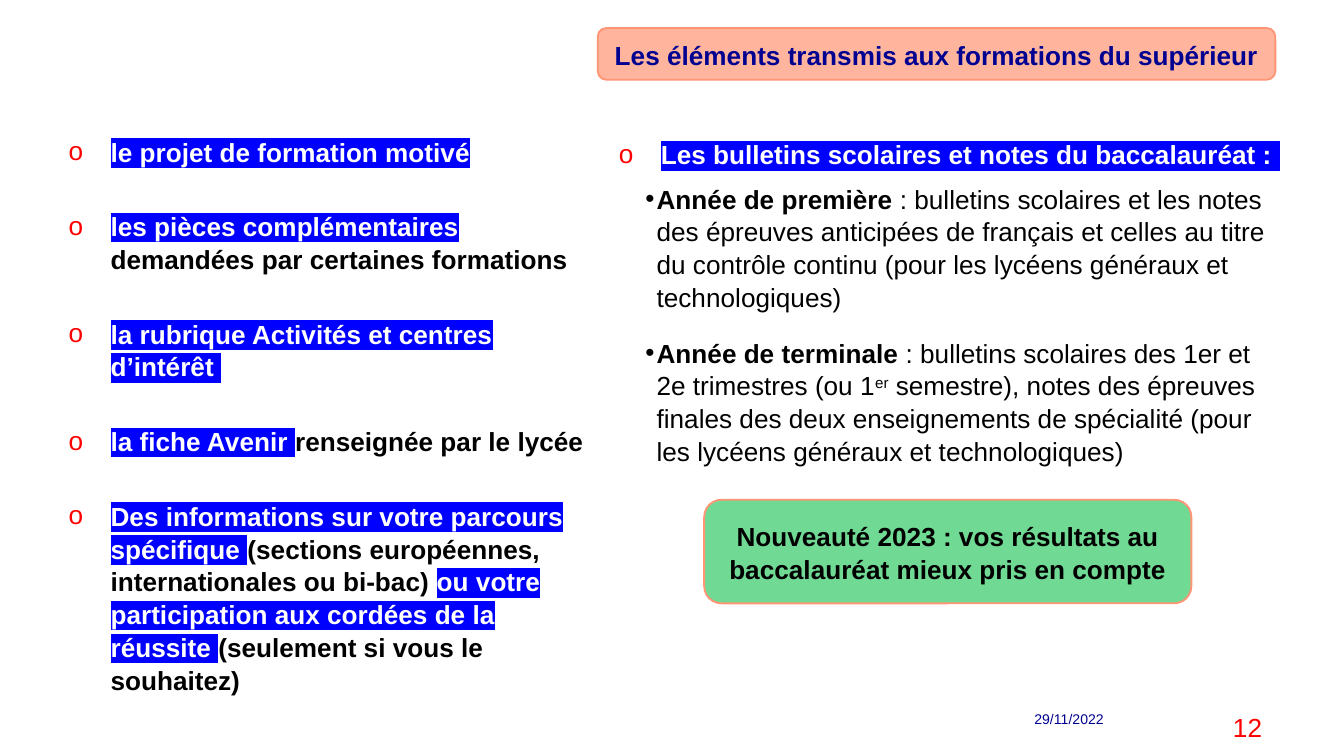
import pptx
import pptx.dml.color
import pptx.enum.shapes
import pptx.enum.text
import pptx.oxml.ns
import pptx.util
from dataclasses import dataclass
from lxml import etree

PX = 9525  # EMU in one px, 96 px to the inch
FONT = "Arial"
COLOURS = {
    "white": "FFFFFF",
    "black": "000000",
    "navy": "000091",
    "red": "FF0000",
    "blue": "0000FF",
    "salmon": "FF9575",
    "green": "34CB69",
}
LEFT = pptx.enum.text.PP_ALIGN.LEFT
CENTER = pptx.enum.text.PP_ALIGN.CENTER
RIGHT = pptx.enum.text.PP_ALIGN.RIGHT
TOP = pptx.enum.text.MSO_ANCHOR.TOP
MIDDLE = pptx.enum.text.MSO_ANCHOR.MIDDLE


@dataclass
class Area:
    left: int
    top: int
    width: int
    height: int


@dataclass
class Bullet:
    char: str
    colour: str
    margin: int
    hang: int
    level: int = 0


@dataclass
class Span:
    text: str
    colour: str = "black"
    bold: bool = True
    marker: str = ""
    raised: bool = False


@dataclass
class Item:
    spans: list[Span]
    bullet: Bullet
    before: float = 0
    after: float = 0


def marked(text: str) -> Span:
    return Span(text, colour="white", marker="blue")


def plain(text: str, raised: bool = False) -> Span:
    return Span(text, bold=False, raised=raised)


def rgb(name: str) -> pptx.dml.color.RGBColor:
    return pptx.dml.color.RGBColor.from_string(COLOURS[name])


def add_xml(parent, tag: str, **attributes: str):
    element = etree.SubElement(parent, pptx.oxml.ns.qn(tag))
    for key, value in attributes.items():
        element.set(key, value)
    return element


def add_span(para, text: str, *, size: float = 14, colour: str = "black",
             bold: bool = False, marker: str = "", raised: bool = False) -> None:
    span = para.add_run()
    span.text = text
    span.font.name = FONT
    span.font.size = pptx.util.Pt(size)
    span.font.bold = bold
    span.font.color.rgb = rgb(colour)
    properties = span.font._element
    if marker:
        highlight = add_xml(properties, "a:highlight")
        add_xml(highlight, "a:srgbClr", val=COLOURS[marker])
        properties.find(pptx.oxml.ns.qn("a:solidFill")).addnext(highlight)
    if raised:
        properties.set("baseline", "30000")


def place(box, area: Area) -> None:
    box.left, box.top = area.left * PX, area.top * PX
    box.width, box.height = area.width * PX, area.height * PX


def set_frame(box, anchor, inset: bool = True):
    frame = box.text_frame
    frame.word_wrap = True
    frame.auto_size = pptx.enum.text.MSO_AUTO_SIZE.NONE
    frame.vertical_anchor = anchor
    if not inset:
        frame.margin_left = frame.margin_right = 0
        frame.margin_top = frame.margin_bottom = 0
    return frame


def write_line(box, text: str, align, anchor, inset: bool = True, **style) -> None:
    para = set_frame(box, anchor, inset).paragraphs[0]
    para.alignment = align
    para.line_spacing = 1.05
    add_span(para, text, **style)


def set_bullet(para, bullet: Bullet) -> None:
    para.level = bullet.level
    properties = para._p.get_or_add_pPr()
    properties.set("marL", str(bullet.margin * PX))
    properties.set("indent", str(-bullet.hang * PX))
    colour = add_xml(properties, "a:buClr")
    add_xml(colour, "a:srgbClr", val=COLOURS[bullet.colour])
    add_xml(properties, "a:buFont", typeface=FONT)
    add_xml(properties, "a:buChar", char=bullet.char)


def fill_list(box, area: Area, items: list[Item]) -> None:
    place(box, area)
    frame = set_frame(box, TOP, inset=False)
    for index, item in enumerate(items):
        para = frame.add_paragraph() if index else frame.paragraphs[0]
        set_bullet(para, item.bullet)
        para.alignment = LEFT
        para.line_spacing = 1.05
        para.space_before = pptx.util.Pt(item.before)
        para.space_after = pptx.util.Pt(item.after)
        for span in item.spans:
            add_span(para, span.text, colour=span.colour, bold=span.bold,
                     marker=span.marker, raised=span.raised)


def add_panel(page, area: Area, fill: str):
    panel = page.shapes.add_shape(
        pptx.enum.shapes.MSO_SHAPE.ROUNDED_RECTANGLE,
        area.left * PX, area.top * PX, area.width * PX, area.height * PX)
    panel.shadow.inherit = False
    panel.fill.solid()
    panel.fill.fore_color.rgb = rgb(fill)
    colour = panel._element.spPr.find(".//" + pptx.oxml.ns.qn("a:srgbClr"))
    add_xml(colour, "a:alpha", val="70000")
    panel.line.color.rgb = rgb("salmon")
    panel.line.width = pptx.util.Pt(1)
    return panel


def add_footer(page, area: Area, text: str, size: float, colour: str) -> None:
    box = page.shapes.add_textbox(0, 0, 0, 0)
    place(box, area)
    write_line(box, text, RIGHT, TOP, size=size, colour=colour)


RING = Bullet("o", "red", margin=30, hang=30)
DOT = Bullet("•", "black", margin=27, hang=8, level=1)

FILE_PARTS = [
    [marked("le projet de formation motivé")],
    [marked("les pièces complémentaires "), Span("demandées par certaines formations")],
    [marked("la rubrique Activités et centres d’intérêt ")],
    [marked("la fiche Avenir "), Span("renseignée par le lycée")],
    [marked("Des informations sur votre parcours spécifique "),
     Span("(sections européennes, internationales ou bi-bac) "),
     marked("ou votre participation aux cordées de la réussite "),
     Span("(seulement si vous le souhaitez)")],
]
REPORTS = [
    Item([marked("Les bulletins scolaires et notes du baccalauréat : ")], RING),
    Item([Span("Année de première "),
          plain(": bulletins scolaires et les notes des épreuves anticipées de français "
                "et celles au titre du contrôle continu (pour les lycéens généraux et "
                "technologiques)")], DOT, before=6, after=6),
    Item([Span("Année de terminale "),
          plain(": bulletins scolaires des 1er et 2e trimestres (ou 1"),
          plain("er", raised=True),
          plain(" semestre), notes des épreuves finales des deux enseignements de "
                "spécialité (pour les lycéens généraux et technologiques)")],
         DOT, before=6, after=6),
]


def main() -> None:
    deck = pptx.Presentation()
    deck.slide_width, deck.slide_height = 960 * PX, 540 * PX
    page = deck.slides.add_slide(deck.slide_layouts[3])
    title, left_body, right_body = page.placeholders

    # Two lists
    fill_list(left_body, Area(49, 96, 378, 393),
              [Item(spans, RING, before=22.3 if index else 0)
               for index, spans in enumerate(FILE_PARTS)])
    fill_list(right_body, Area(442, 98, 477, 262), REPORTS)

    # Title on its banner
    banner_area = Area(427, 20, 484, 37)
    banner = add_panel(page, banner_area, "salmon")
    title._element.addprevious(banner._element)
    place(title, banner_area)
    write_line(title, "Les éléments transmis aux formations du supérieur",
               CENTER, MIDDLE, inset=False, colour="navy", bold=True)

    # News panel
    news = add_panel(page, Area(503, 357, 348, 74), "green")
    write_line(news, "Nouveauté 2023 : vos résultats au baccalauréat mieux pris en compte",
               CENTER, MIDDLE, bold=True)

    # Date and page number
    add_footer(page, Area(675, 502, 123, 37), "29/11/2022", 7.5, "navy")
    add_footer(page, Area(798, 502, 113, 37), "12", 14, "red")

    deck.save("out.pptx")


if __name__ == "__main__":
    main()
